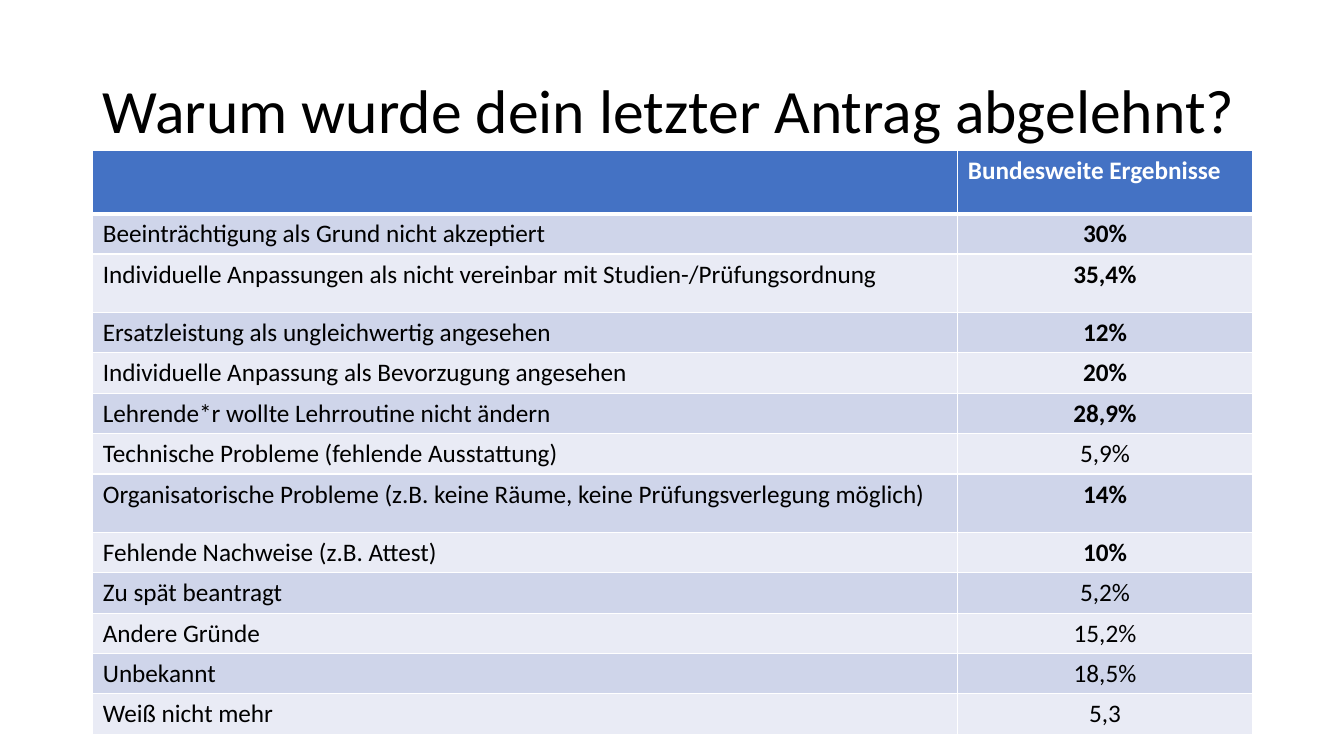
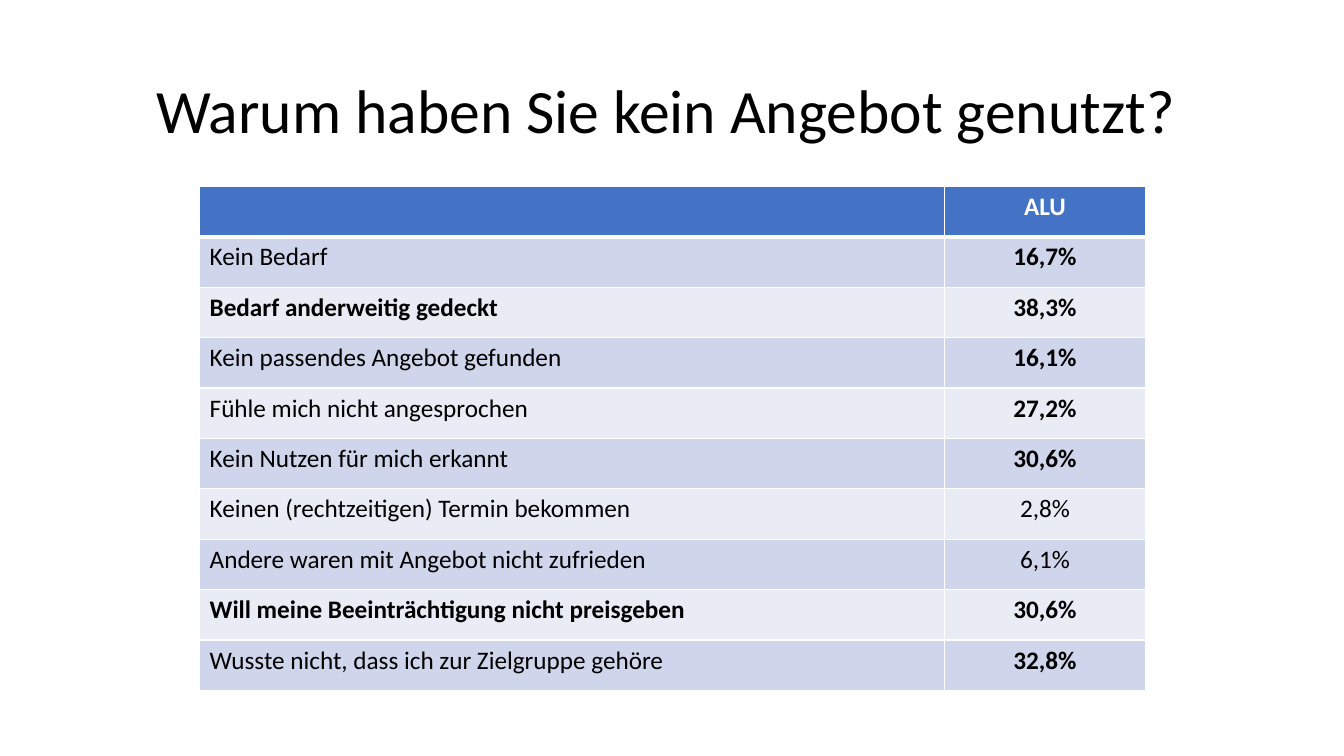
"""Build two survey slides, each with a title and a table of reasons."""
import pptx
import pptx.dml.color
import pptx.enum.text
import pptx.oxml
import pptx.oxml.ns
import pptx.util

Inches = pptx.util.Inches
Pt = pptx.util.Pt
RGBColor = pptx.dml.color.RGBColor
Align = pptx.enum.text.PP_ALIGN

BLACK = RGBColor(0x00, 0x00, 0x00)
WHITE = RGBColor(0xFF, 0xFF, 0xFF)
HEADER_BLUE = RGBColor(0x44, 0x72, 0xC4)
BANDS = (RGBColor(0xCF, 0xD5, 0xEA), RGBColor(0xE9, 0xEB, 0xF5))

TITLE_FORMAT = {"name": "Calibri", "size": Pt(44), "bold": False}
CELL_FORMAT = {"name": "Calibri", "size": Pt(18)}
TITLE_TOP, TITLE_HEIGHT = 0.4, 1.45
THIN, THICK = 1, 3

NONE, VALUE, BOTH = (), (1,), (0, 1)

SURVEYS = [
    {
        "title": "Warum wurde dein letzter Antrag abgelehnt?",
        "title_left": 0.92,
        "title_width": 11.5,
        "table_at": (0.92, 1.49),
        "columns": (8.58, 2.92),
        "heading": "Bundesweite Ergebnisse",
        "heading_align": Align.LEFT,
        "row_height": 0.36,
        "tall_rows": {0: 0.63, 2: 0.58, 7: 0.58},
        "reasons": [
            ("Beeinträchtigung als Grund nicht akzeptiert", "30%", VALUE),
            ("Individuelle Anpassungen als nicht vereinbar mit Studien-/Prüfungsordnung",
             "35,4%", VALUE),
            ("Ersatzleistung als ungleichwertig angesehen", "12%", VALUE),
            ("Individuelle Anpassung als Bevorzugung angesehen", "20%", VALUE),
            ("Lehrende*r wollte Lehrroutine nicht ändern", "28,9%", VALUE),
            ("Technische Probleme (fehlende Ausstattung)", "5,9%", NONE),
            ("Organisatorische Probleme (z.B. keine Räume, keine Prüfungsverlegung möglich)",
             "14%", VALUE),
            ("Fehlende Nachweise (z.B. Attest)", "10%", VALUE),
            ("Zu spät beantragt", "5,2%", NONE),
            ("Andere Gründe", "15,2%", NONE),
            ("Unbekannt", "18,5%", NONE),
            ("Weiß nicht mehr", "5,3", NONE),
        ],
    },
    {
        "title": "Warum haben Sie kein Angebot genutzt?",
        "title_left": 1.45,
        "title_width": 10.44,
        "table_at": (1.98, 1.85),
        "columns": (7.39, 1.99),
        "heading": "ALU",
        "heading_align": Align.CENTER,
        "row_height": 0.5,
        "tall_rows": {},
        "reasons": [
            ("Kein Bedarf", "16,7%", VALUE),
            ("Bedarf anderweitig gedeckt", "38,3%", BOTH),
            ("Kein passendes Angebot gefunden", "16,1%", VALUE),
            ("Fühle mich nicht angesprochen", "27,2%", VALUE),
            ("Kein Nutzen für mich erkannt", "30,6%", VALUE),
            ("Keinen (rechtzeitigen) Termin bekommen", "2,8%", NONE),
            ("Andere waren mit Angebot nicht zufrieden", "6,1%", NONE),
            ("Will meine Beeinträchtigung nicht preisgeben", "30,6%", BOTH),
            ("Wusste nicht, dass ich zur Zielgruppe gehöre", "32,8%", VALUE),
        ],
    },
]


def write(paragraph, text, color, formats):
    paragraph.text = text
    font = paragraph.font
    for attribute, value in formats.items():
        setattr(font, attribute, value)
    font.color.rgb = color


def add_title(slide, survey):
    title = slide.shapes.add_textbox(
        Inches(survey["title_left"]), Inches(TITLE_TOP),
        Inches(survey["title_width"]), Inches(TITLE_HEIGHT))
    frame = title.text_frame
    frame.word_wrap = True
    frame.vertical_anchor = pptx.enum.text.MSO_ANCHOR.MIDDLE
    frame.paragraphs[0].line_spacing = 0.9
    write(frame.paragraphs[0], survey["title"], BLACK, TITLE_FORMAT)


def add_borders(cell, row):
    widths = {"L": THIN, "R": THIN,
              "T": THICK if row == 1 else THIN,
              "B": THICK if row == 0 else THIN}
    properties = cell._tc.get_or_add_tcPr()
    for side, width in widths.items():
        properties.append(pptx.oxml.parse_xml(
            f'<a:ln{side} {pptx.oxml.ns.nsdecls("a")} w="{Pt(width)}">'
            f'<a:solidFill><a:srgbClr val="{WHITE}"/></a:solidFill></a:ln{side}>'))


def add_reasons(slide, survey):
    rows = [("", survey["heading"], BOTH)] + survey["reasons"]
    heights = [survey["tall_rows"].get(row, survey["row_height"]) for row in range(len(rows))]
    left, top = survey["table_at"]
    table = slide.shapes.add_table(
        len(rows), len(survey["columns"]), Inches(left), Inches(top),
        Inches(sum(survey["columns"])), Inches(sum(heights))).table
    for column, width in zip(table.columns, survey["columns"]):
        column.width = Inches(width)
    for row, (label, value, bold_columns) in enumerate(rows):
        table.rows[row].height = Inches(heights[row])
        value_align = Align.CENTER if row else survey["heading_align"]
        for column, (text, align) in enumerate([(label, Align.LEFT), (value, value_align)]):
            cell = table.cell(row, column)
            add_borders(cell, row)
            cell.fill.solid()
            cell.fill.fore_color.rgb = BANDS[(row - 1) % 2] if row else HEADER_BLUE
            paragraph = cell.text_frame.paragraphs[0]
            paragraph.alignment = align
            write(paragraph, text, BLACK if row else WHITE,
                  {**CELL_FORMAT, "bold": column in bold_columns})


def main():
    deck = pptx.Presentation()
    deck.slide_width, deck.slide_height = Inches(13.33), Inches(7.5)
    for survey in SURVEYS:
        slide = deck.slides.add_slide(deck.slide_layouts[6])
        add_title(slide, survey)
        add_reasons(slide, survey)
    deck.save("out.pptx")


if __name__ == "__main__":
    main()
